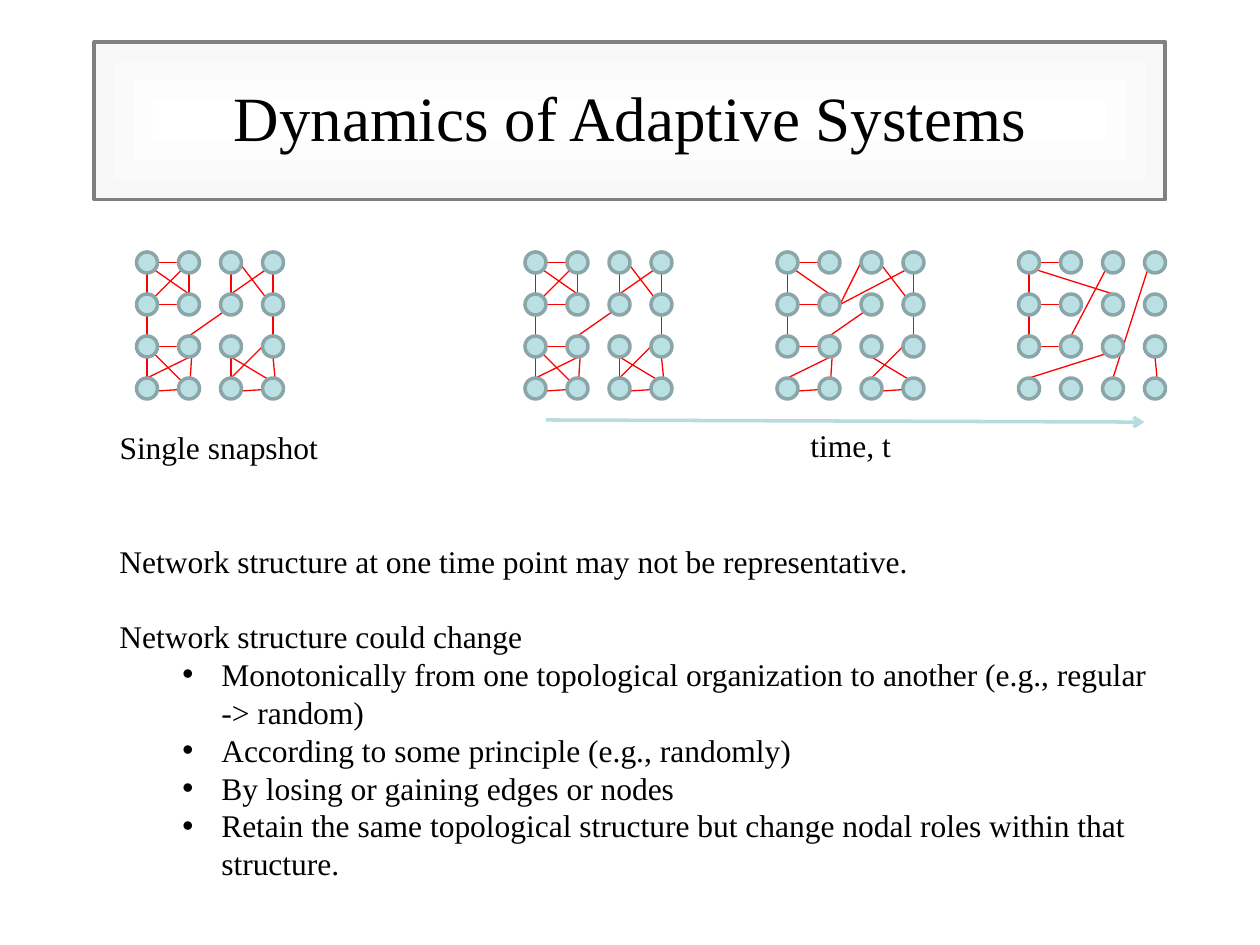
import pptx
import pptx.dml.color
import pptx.enum.shapes
import pptx.enum.text
import pptx.oxml
import pptx.oxml.ns
import pptx.util
from lxml import etree

PX = 7620  # EMU: 120 px to the inch
FONT = "Times New Roman"
BLACK, RED, ARROW = "000000", "FF0000", "B6DCDF"
NODE_FILL, NODE_LINE = "BBE0E3", "8AA6A8"
PITCH, NODE, NODES_PER_SIDE = 40, 20, 4

# Edges are (x1, y1, x2, y2) in px from the corner of a network.
LASTING_EDGES = [(20, 10, 40, 10), (20, 50, 57, 50), (0, 90, 57, 90), (10, 20, 10, 80)]
MIDDLE_EDGES = [
    (50, 80, 83, 57), (17, 17, 50, 40), (10, 120, 57, 97), (90, 120, 130, 80),
    (90, 100, 140, 130), (90, 0, 123, 43), (130, 20, 130, 80), (53, 92, 50, 140),
    (10, 133, 57, 130), (90, 133, 137, 130),
]
CORNER_EDGE = (133, 130, 130, 100)
EARLY_EDGES = [
    CORNER_EDGE, (90, 40, 123, 17), (10, 100, 10, 120), (10, 90, 50, 130),
    (10, 50, 50, 10), (50, 17, 50, 50), (90, 60, 90, 0), (90, 100, 90, 120),
]
GAINED_EDGES = [(60, 50, 123, 17), (60, 50, 80, 10)]
LATE_EDGES = [
    CORNER_EDGE, (50, 80, 83, 17), (17, 17, 90, 40), (10, 120, 83, 97), (90, 120, 123, 17),
]

FIRST_NETWORK = LASTING_EDGES + MIDDLE_EDGES + EARLY_EDGES
NETWORKS = [
    (130, FIRST_NETWORK),
    (500, FIRST_NETWORK),
    (740, LASTING_EDGES + MIDDLE_EDGES + GAINED_EDGES),
    (970, LASTING_EDGES + LATE_EDGES),
]

STATEMENTS = [
    "Network structure at one time point may not be representative.",
    "Network structure could change",
]
CHANGES = [
    "Monotonically from one topological organization to another (e.g., regular -> random)",
    "According to some principle (e.g., randomly)",
    "By losing or gaining edges or nodes",
    "Retain the same topological structure but change nodal roles within that structure.",
]


def emu(*lengths):
    return [pptx.util.Emu(length * PX) for length in lengths]


def rgb(value):
    return pptx.dml.color.RGBColor.from_string(value)


def format_line(shape, color, width):
    shape.line.color.rgb = rgb(color)
    shape.line.width = pptx.util.Pt(width)


def add_run(paragraph, text, size=18):
    run = paragraph.add_run()
    run.text = text
    run.font.name = FONT
    run.font.size = pptx.util.Pt(size)
    run.font.color.rgb = rgb(BLACK)


def add_line(slide, ends, color, width, arrow=False):
    line = slide.shapes.add_connector(pptx.enum.shapes.MSO_CONNECTOR.STRAIGHT, *emu(*ends))
    format_line(line, color, width)
    if arrow:
        tail = etree.SubElement(line.line._get_or_add_ln(), pptx.oxml.ns.qn("a:tailEnd"))
        tail.set("type", "arrow")
    etree.SubElement(line._element.spPr, pptx.oxml.ns.qn("a:effectLst"))


def add_text_frame(slide, box):
    frame = slide.shapes.add_textbox(*emu(*box)).text_frame
    frame.word_wrap = True
    return frame


def add_label(slide, box, text):
    add_run(add_text_frame(slide, box).paragraphs[0], text)


def add_title(slide, box):
    left, top, width, height = box
    panel = slide.shapes.add_shape(pptx.enum.shapes.MSO_SHAPE.RECTANGLE, *emu(*box))
    panel.shadow.inherit = False
    format_line(panel, "808080", 2.25)
    gradient = pptx.oxml.parse_xml(
        f'<a:gradFill {pptx.oxml.ns.nsdecls("a")} rotWithShape="1"><a:gsLst>'
        '<a:gs pos="0"><a:srgbClr val="FFFFFF"/></a:gs>'
        '<a:gs pos="100000"><a:srgbClr val="F8F8F8"/></a:gs></a:gsLst>'
        '<a:path path="shape"><a:fillToRect l="50000" t="50000" r="50000" b="50000"/></a:path>'
        '</a:gradFill>')
    panel._element.spPr.prstGeom.addnext(gradient)
    title = slide.shapes.title
    title._element.addprevious(panel._element)
    title.left, title.top, title.width, title.height = emu(left - 30, top - 4, width + 60, height)
    title.text_frame.vertical_anchor = pptx.enum.text.MSO_ANCHOR.MIDDLE
    paragraph = title.text_frame.paragraphs[0]
    paragraph.alignment = pptx.enum.text.PP_ALIGN.CENTER
    add_run(paragraph, "Dynamics of Adaptive Systems", 36)


def add_network(slide, left, top, edges):
    for x1, y1, x2, y2 in edges:
        add_line(slide, (left + x1, top + y1, left + x2, top + y2), RED, 0.75)
    for index in range(NODES_PER_SIDE ** 2):
        row, column = divmod(index, NODES_PER_SIDE)
        node = slide.shapes.add_shape(
            pptx.enum.shapes.MSO_SHAPE.OVAL,
            *emu(left + column * PITCH, top + row * PITCH, NODE, NODE))
        node.shadow.inherit = False
        node.fill.solid()
        node.fill.fore_color.rgb = rgb(NODE_FILL)
        format_line(node, NODE_LINE, 2)


def make_bullet(paragraph):
    paragraph.level = 1
    properties = paragraph._p.get_or_add_pPr()
    indent, hanging = emu(97, -37)
    properties.set("marL", str(indent))
    properties.set("indent", str(hanging))
    etree.SubElement(properties, pptx.oxml.ns.qn("a:buFont")).set("typeface", "Arial")
    etree.SubElement(properties, pptx.oxml.ns.qn("a:buChar")).set("char", "•")


def add_body(slide, box):
    frame = add_text_frame(slide, box)
    line_height = pptx.util.Pt(21.6)
    for index, text in enumerate(STATEMENTS + CHANGES):
        paragraph = frame.add_paragraph() if index else frame.paragraphs[0]
        if text in CHANGES:
            make_bullet(paragraph)
        paragraph.line_spacing = line_height
        if text == STATEMENTS[1]:
            paragraph.space_before = line_height
        add_run(paragraph, text)


def main():
    presentation = pptx.Presentation()
    presentation.slide_width, presentation.slide_height = emu(1200, 900)
    slide = presentation.slides.add_slide(presentation.slide_layouts[5])
    add_title(slide, (90, 40, 1020, 150))
    for left, edges in NETWORKS:
        add_network(slide, left, 240, edges)
    add_line(slide, (520, 400, 1090, 402), ARROW, 2, arrow=True)
    add_label(slide, (102, 402, 308, 48), "Single snapshot")
    add_label(slide, (760, 400, 260, 48), "time, t")
    add_body(slide, (102, 510, 1008, 340))
    presentation.save("out.pptx")


if __name__ == "__main__":
    main()
